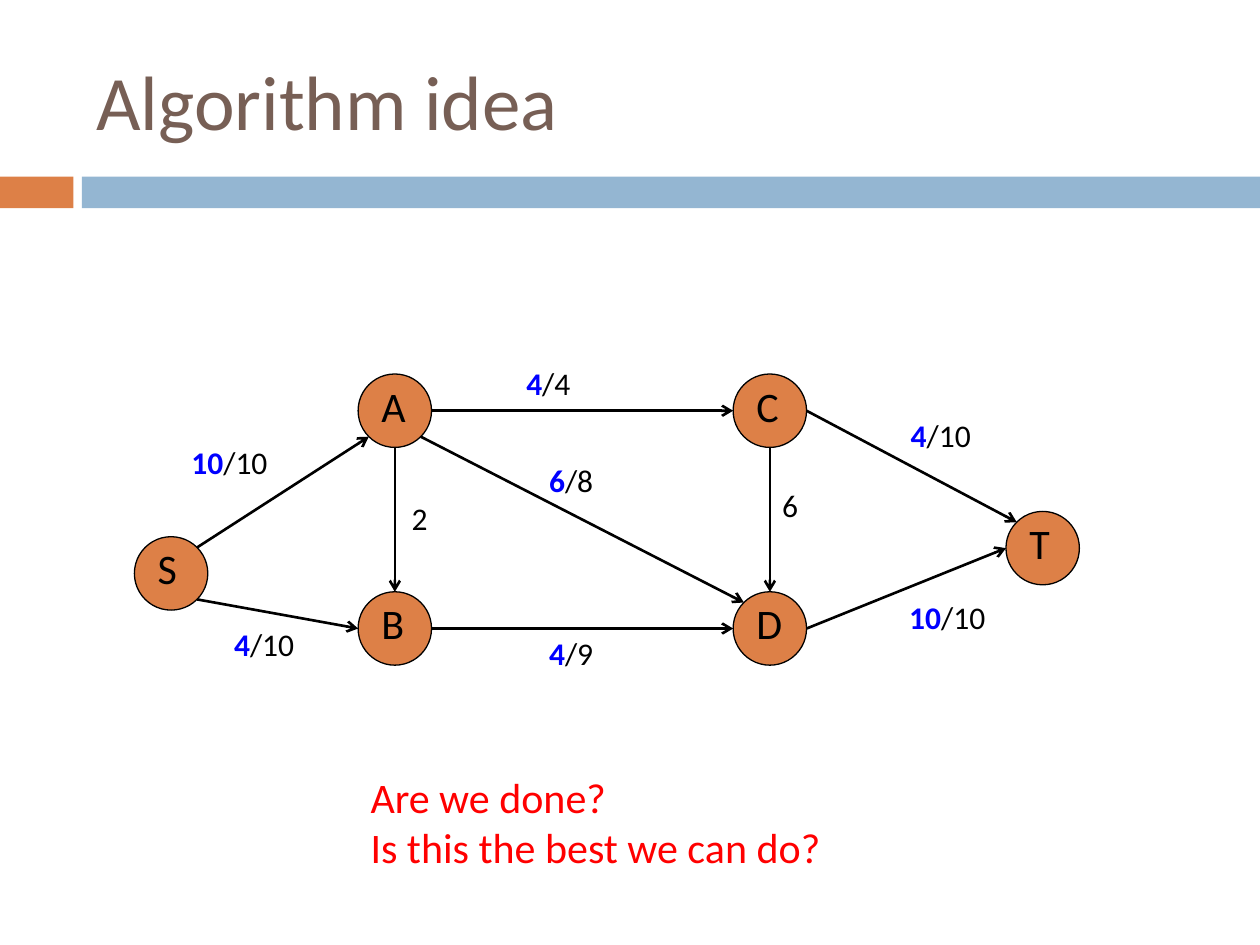
from math import cos, radians, sin

from lxml import etree
from pptx import Presentation
from pptx import util as u
from pptx.dml.color import RGBColor
from pptx.enum import shapes, text
from pptx.oxml import ns

COLORS = {"orange": "DD8047", "blue": "94B6D2", "title": "775F55",
          "black": "000000", "flow": "0000FF", "red": "FF0000"}
FONT = "Calibri"
DIAMETER = 1.48
NODES = {"S": (0, 3.28), "A": (4.51, 0), "B": (4.51, 4.39),
         "C": (12.07, 0), "D": (12.07, 4.39), "T": (17.57, 2.77)}
ANGLES = {"right": 0, "lower right": 45, "bottom": 90, "lower left": 135,
          "left": 180, "upper left": 225, "top": 270, "upper right": 315}
EDGES = [("S", "upper right", "A", "lower left", "10", "/10", 0.9, 1.27),
         ("S", "lower right", "B", "left", "4", "/10", 1.76, 4.93),
         ("B", "right", "D", "left", "4", "/9", 8.11, 5.11),
         ("A", "bottom", "B", "top", "", "2", 5.34, 2.39),
         ("A", "right", "C", "left", "4", "/4", 7.65, -0.33),
         ("C", "bottom", "D", "top", "", "6", 12.81, 2.14),
         ("A", "lower right", "D", "upper left", "6", "/8", 8.11, 1.63),
         ("C", "right", "T", "upper left", "4", "/10", 15.4, 0.72),
         ("D", "right", "T", "left", "10", "/10", 15.37, 4.4)]


def rgb(name):
    """Return the named colour."""
    return RGBColor.from_string(COLORS[name])


def add_text(s, box, lines, size, anchor=text.MSO_ANCHOR.TOP):
    """Add a text box whose lines are lists of (text, colour, bold) runs."""
    tf = s.shapes.add_textbox(*map(u.Cm, box)).text_frame
    for name, value in {"word_wrap": True, "vertical_anchor": anchor}.items():
        setattr(tf, name, value)
    for i, runs in enumerate(lines):
        p = tf.add_paragraph() if i else tf.paragraphs[0]
        for words, color, bold in runs:
            r = p.add_run()
            r.text = words
            formats = {"name": FONT, "size": u.Pt(size), "bold": bold}
            for name, value in formats.items():
                setattr(r.font, name, value)
            r.font.color.rgb = rgb(color)


def add_filled(s, kind, box, color):
    """Add a preset shape with a plain fill and no outline."""
    sp = s.shapes.add_shape(kind, *map(u.Cm, box))
    sp.shadow.inherit = False
    sp.fill.solid()
    sp.fill.fore_color.rgb = rgb(color)
    sp.line.fill.background()
    return sp


def add_node(s, x, y, name):
    """Add a lettered circle with its top left corner at x, y."""
    sp = add_filled(s, shapes.MSO_SHAPE.OVAL, (x, y, DIAMETER, DIAMETER), "orange")
    sp.line.color.rgb = rgb("black")
    sp.line.width = u.Pt(0.75)
    add_text(s, (x + 0.22, y, 1.27, 1.27), [[(name, "black", False)]], 24)


def rim_point(x, y, node, side):
    """Return the point on the given side of a node's circle."""
    left, top = NODES[node]
    radius, angle = DIAMETER / 2, radians(ANGLES[side])
    return (u.Cm(x + left + radius * (1 + cos(angle))),
            u.Cm(y + top + radius * (1 + sin(angle))))


def add_arrow(s, start, end):
    """Add a straight arrow between two points."""
    line = s.shapes.add_connector(shapes.MSO_CONNECTOR.STRAIGHT, *start, *end)
    line.line.color.rgb = rgb("black")
    line.line.width = u.Pt(1.5)
    tail = etree.SubElement(line.line._get_or_add_ln(), ns.qn("a:tailEnd"))
    tail.set("type", "arrow")
    etree.SubElement(line._element.spPr, ns.qn("a:effectLst"))


def add_header(s, x, y, width):
    """Add the title and the two-colour band below it."""
    rect = shapes.MSO_SHAPE.RECTANGLE
    add_filled(s, rect, (x, y + 3.56, 1.48, 0.64), "orange")
    add_filled(s, rect, (x + 1.65, y + 3.56, width - 1.65, 0.64), "blue")
    add_text(s, (x + 1.69, y + 0.64, 22.66, 2.74),
             [[("Algorithm idea", "title", False)]], 44, text.MSO_ANCHOR.MIDDLE)


def add_network(s, x, y):
    """Add the flow network with its nodes, arrows and flow/capacity labels."""
    for name, (left, top) in NODES.items():
        add_node(s, x + left, y + top, name)
    for tail, out_side, head, in_side, flow, capacity, left, top in EDGES:
        add_arrow(s, rim_point(x, y, tail, out_side), rim_point(x, y, head, in_side))
        runs = [(flow, "flow", True)] if flow else []
        add_text(s, (x + left, y + top, 2.4, 1.02),
                 [runs + [(capacity, "black", False)]], 18)


def add_questions(s, x, y):
    """Add the closing questions."""
    questions = ["Are we done?", "Is this the best we can do?"]
    add_text(s, (x, y, 9.83, 2.31), [[(q, "red", False)] for q in questions], 24)


def main():
    """Build and save the slide."""
    prs = Presentation()
    prs.slide_width, prs.slide_height = u.Cm(25.4), u.Cm(19.05)
    s = prs.slides.add_slide(prs.slide_layouts[6])
    add_header(s, 0, 0, 25.4)
    add_network(s, 2.71, 7.54)
    add_questions(s, 7.22, 15.42)
    prs.save("out.pptx")


if __name__ == "__main__":
    main()
